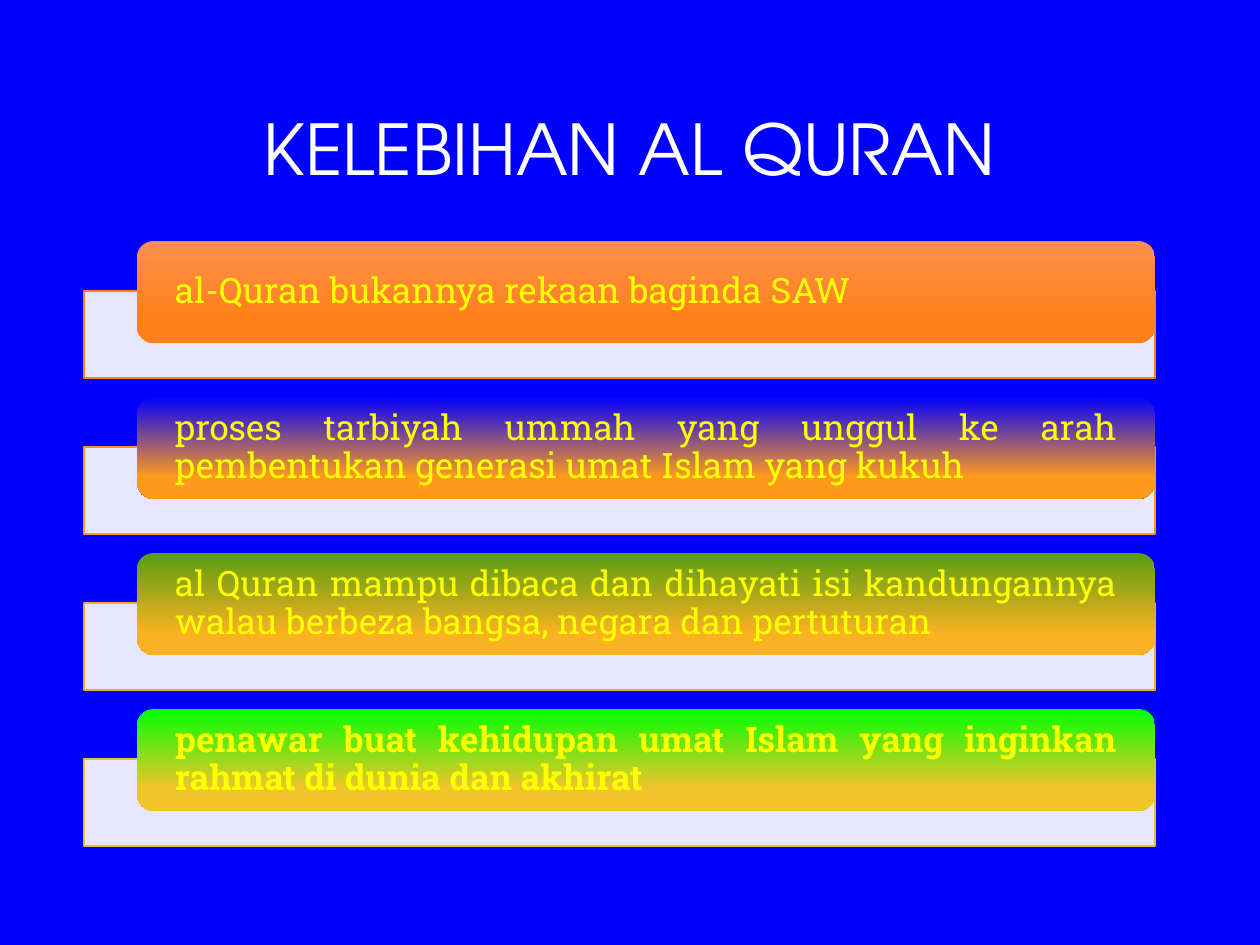
from lxml import etree
from pptx import Presentation
from pptx import util as u
from pptx.dml.color import RGBColor
from pptx.enum import shapes, text
from pptx.oxml import ns

PX = 914400 / 126
BLUE = RGBColor(0x00, 0x00, 0xFF)
WHITE = RGBColor(0xFF, 0xFF, 0xFF)
YELLOW = RGBColor(0xFF, 0xFF, 0x00)
LEFT, JUSTIFY = text.PP_ALIGN.LEFT, text.PP_ALIGN.JUSTIFY

# Wording, alignment, bold, tray outline, bar gradient from top to bottom
POINTS = [
    ("al-Quran bukannya rekaan baginda SAW", LEFT, False,
     RGBColor(0xFE, 0x80, 0x1A), RGBColor(0xFE, 0x90, 0x4F), RGBColor(0xFF, 0x80, 0x19)),
    ("proses tarbiyah ummah yang unggul ke arah pembentukan generasi umat Islam yang kukuh",
     JUSTIFY, False,
     RGBColor(0xF7, 0x98, 0x23), BLUE, RGBColor(0xFF, 0x99, 0x1B)),
    ("al Quran mampu dibaca dan dihayati isi kandungannya walau berbeza bangsa, "
     "negara dan pertuturan", JUSTIFY, False,
     RGBColor(0xF0, 0xAD, 0x2C), RGBColor(0x55, 0x9E, 0x12), RGBColor(0xFA, 0xB1, 0x22)),
    ("penawar buat kehidupan umat Islam yang inginkan rahmat di dunia dan akhirat",
     JUSTIFY, True,
     RGBColor(0xE9, 0xBF, 0x35), RGBColor(0x00, 0xFF, 0x00), RGBColor(0xF2, 0xC4, 0x2C)),
]
FIRST_TRAY, FIRST_BAR, PITCH = 291, 241, 156


def px(length):
    return u.Emu(round(length * PX))


def write(box, wording, *, font, size, color, align, bold=False, inset=0):
    frame = box.text_frame
    frame.word_wrap = True
    frame.auto_size = text.MSO_AUTO_SIZE.NONE
    frame.vertical_anchor = text.MSO_ANCHOR.MIDDLE
    frame.margin_left = frame.margin_right = px(inset)
    frame.margin_top = frame.margin_bottom = 0
    para = frame.paragraphs[0]
    para.alignment = align
    para.line_spacing = 0.9
    span = para.add_run()
    span.text = wording
    span.font.name = font
    span.font.size = u.Pt(size)
    span.font.bold = bold
    span.font.color.rgb = color


class Painter:
    title_font = "TeX Gyre Adventor"
    body_font = "Roboto Slab"

    def __init__(self, slide):
        self.slide = slide

    def background(self, color):
        fill = self.slide.background.fill
        fill.solid()
        fill.fore_color.rgb = color

    def title(self, wording, left, top, width, height):
        box = self.slide.shapes.title
        box.left, box.top, box.width, box.height = map(px, (left, top, width, height))
        write(box, wording, font=self.title_font, size=40, color=WHITE,
              align=text.PP_ALIGN.CENTER)

    def shape(self, kind, *bounds):
        shape = self.slide.shapes.add_shape(kind, *map(px, bounds))
        shape.shadow.inherit = False
        return shape

    def tray(self, left, top, width, height, outline):
        tray = self.shape(shapes.MSO_SHAPE.RECTANGLE, left, top, width, height)
        tray.fill.solid()
        tray.fill.fore_color.rgb = WHITE
        color = tray.fill._xPr.find(".//" + ns.qn("a:srgbClr"))
        etree.SubElement(color, ns.qn("a:alpha"), val="90000")
        tray.line.color.rgb = outline
        tray.line.width = u.Pt(0.75)

    def bar(self, wording, left, top, width, height, colors, align, bold):
        bar = self.shape(shapes.MSO_SHAPE.ROUNDED_RECTANGLE, left, top, width, height)
        bar.fill.gradient()
        bar.fill.gradient_angle = 270
        for stop, color, position in zip(bar.fill.gradient_stops, colors, (0, 0.78)):
            stop.color.rgb = color
            stop.position = position
        bar.line.fill.background()
        write(bar, wording, font=self.body_font, size=20, color=YELLOW,
              align=align, bold=bold, inset=33)


def main():
    deck = Presentation()
    deck.slide_width, deck.slide_height = u.Inches(10), u.Inches(7.5)
    page = Painter(deck.slides.add_slide(deck.slide_layouts[5]))
    page.background(BLUE)
    page.title("KELEBIHAN AL QURAN", 94, 42, 1071, 222)

    # Each point is a gradient bar over a pale tray
    for row, (wording, align, bold, outline, *colors) in enumerate(POINTS):
        shift = row * PITCH
        page.tray(84, FIRST_TRAY + shift, 1071, 87, outline)
        page.bar(wording, 137, FIRST_BAR + shift, 1018, 102, colors, align, bold)

    deck.save("out.pptx")


if __name__ == "__main__":
    main()
